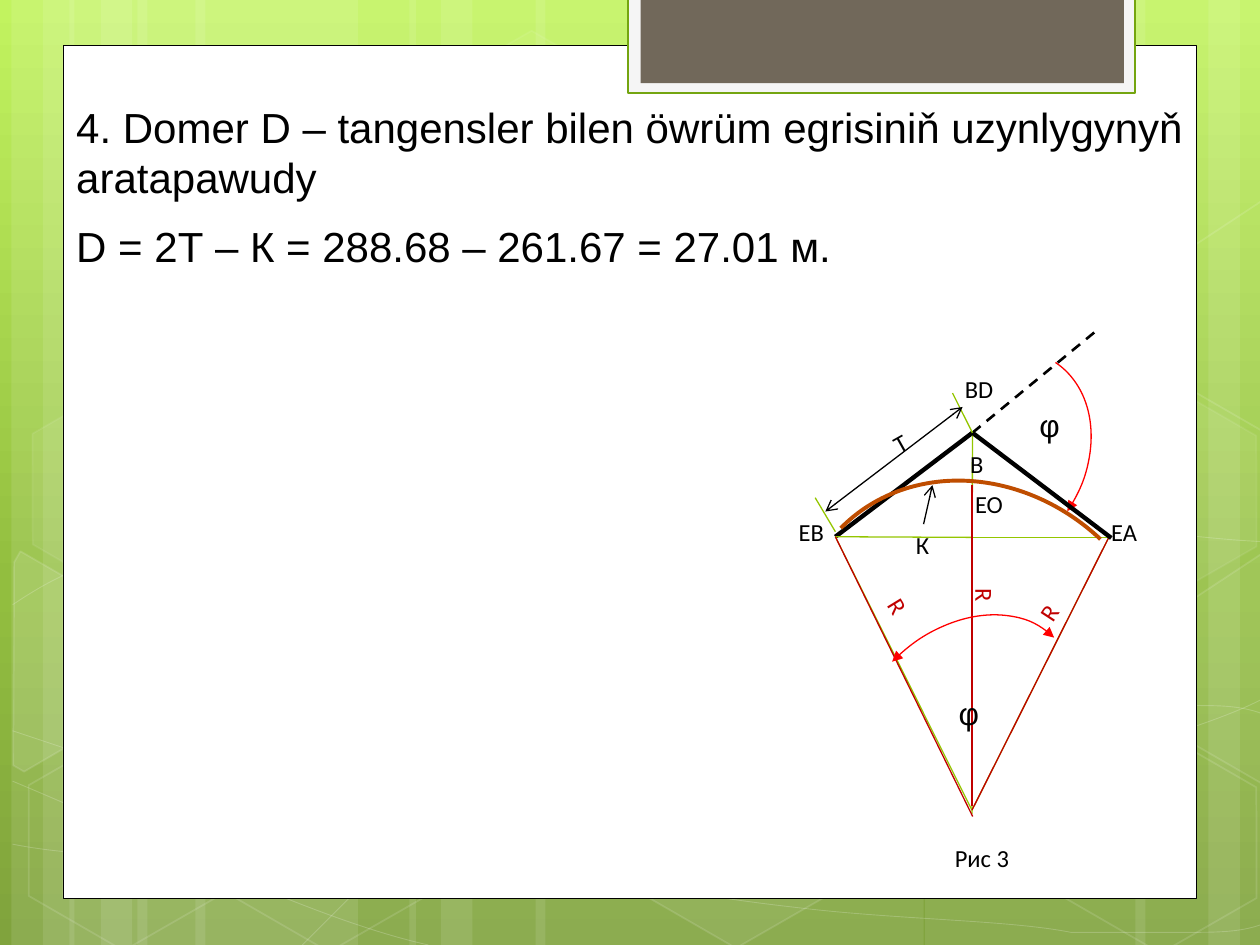
from copy import deepcopy
from dataclasses import dataclass
from math import cos, radians, sin

from pptx import Presentation
from pptx.dml.color import RGBColor
from pptx.enum.dml import MSO_LINE_DASH_STYLE as Dash
from pptx.enum.shapes import MSO_CONNECTOR as Connector, MSO_SHAPE as Shape
from pptx.enum.text import MSO_ANCHOR as Anchor, MSO_AUTO_SIZE as AutoSize, PP_ALIGN as Align
from pptx.oxml.ns import qn
from pptx.util import Inches, Pt


@dataclass(frozen=True)
class Theme:
    white: str = "FFFFFF"
    black: str = "000000"
    red: str = "FF0000"
    radius: str = "C00000"
    green: str = "94C600"
    curve: str = "BF4D00"
    tab: str = "71685A"
    tab_frame: str = "F5F5F5"
    tab_border: str = "74A510"
    backdrop: tuple = ((0, "C2F35F"), (0.62, "92BE3F"), (1, "80A33D"))
    heading_font: str = "Arial"
    label_font: str = "Calibri"
    heading_size: int = 24
    angle_size: int = 18
    label_size: int = 14


THEME = Theme()
COLUMNS, ROWS = 100, 75
WIDTH, HEIGHT = Inches(10), Inches(7.5)
CELL = WIDTH // COLUMNS
TILT = 30

BARS = ((0, 17.5), (4.6, 17.5), (31.6, 30.8))
MIRROR = 101.8
HEXAGONS = (
    (33.4, 3.6, 4, 8), (49.7, 58.9, 6, 12), (1.1, 59.1, 0, 12), (1.4, 31.2, 7, 8),
    (17.4, 59.2, 0, 12), (75.3, 45.3, 10, 12), (83.4, 59.3, 0, 12), (83.4, 31.4, 7, 8),
)
CUT_HEXAGONS = (
    (((0.8, 44.5), (1.9, 43.8), (9.6, 48.3), (9.5, 57), (2, 61.4), (0.9, 60.7)), (3.6, 53.6), 10),
    (((92.6, 48.5), (100.2, 44.1), (100.9, 44.6), (100.9, 61.3), (100.2, 61.7), (92.6, 57.3)),
     (98.5, 52), 4),
    (((92.6, 20.7), (100.2, 16.3), (101, 16.8), (100.9, 33.5), (100.2, 33.9), (92.6, 29.5)),
     (98.5, 24.1), 0),
)
WAVES = (
    ((0.7, 67.3), (6.1, 67.6), (11.5, 67.9), (19, 67.8), (26.5, 67.7), (35.8, 67.5), (45.8, 66.5),
     (55.8, 65.5), (70, 63.6), (79.2, 61.7), (88.3, 59.8), (97.7, 56.8), (100.7, 55.1)),
    ((0.7, 47.7), (3.6, 46.1), (6.5, 44.6), (12.1, 43.1), (17.8, 41.6), (25.9, 39.4), (34.7, 38.7),
     (43.6, 38), (54.4, 37.9), (65.4, 38.7), (76.4, 39.5), (94.7, 42.6), (100.7, 43.4)),
    ((0.6, 61.7), (12.7, 67.2), (24.7, 72.7), (33.5, 74.9)),
    ((0.7, 57.8), (3.8, 58.9), (7, 60), (12.8, 61.6), (18.6, 63.1), (27.3, 65.6), (35.7, 67.3),
     (44, 69), (54.5, 70.8), (62.8, 71.8), (71.1, 72.9), (80, 73.3), (85.3, 73.6),
     (90.6, 74), (91.9, 73.8), (94.5, 73.8), (97.1, 73.7), (98.9, 73.5), (100.7, 73.4)),
    ((24.2, 74.9), (26, 72.9), (27.8, 70.9), (30.2, 69.1), (32.6, 67.2), (36, 65.3), (38.8, 63.9),
     (41.6, 62.5), (43.3, 61.9), (46.9, 60.9), (50.6, 59.9), (57.3, 58.5), (60.8, 57.8),
     (64.4, 57.1), (64.9, 57.1), (68, 56.9), (71.1, 56.6), (76, 56.3), (79.4, 56.2),
     (82.9, 56.1), (88.6, 56.2), (88.6, 56.2), (91, 56.2), (93, 56.2), (95.3, 56.2),
     (97.1, 56.3), (98.8, 56.4), (100.6, 56.6)),
)


def grid(*cells):
    return [round(cell * CELL) for cell in cells]


def set_alpha(element, percent):
    for color in element.iter(qn("a:srgbClr")):
        color.append(color.makeelement(qn("a:alpha"), {"val": str(percent * 1000)}))


def style_line(shape, color, width, alpha=100, dash=None, head=None, tail=None):
    shape.line.color.rgb = RGBColor.from_string(color)
    shape.line.width = Pt(width)
    if dash:
        shape.line.dash_style = dash
    line = shape.element.find(".//" + qn("a:ln"))
    if alpha < 100:
        set_alpha(line, alpha)
    for tag, kind in (("a:headEnd", head), ("a:tailEnd", tail)):
        if kind:
            line.append(line.makeelement(qn(tag), {"type": kind}))


def style_fill(shape, color=None, alpha=100):
    shape.shadow.inherit = False
    if color is None or alpha == 0:
        shape.fill.background()
        return
    shape.fill.solid()
    shape.fill.fore_color.rgb = RGBColor.from_string(color)
    if alpha < 100:
        set_alpha(shape.element.spPr.find(qn("a:solidFill")), alpha)


def add_block(slide, kind, box, color=None, alpha=100, rotation=0):
    shape = slide.shapes.add_shape(kind, *grid(*box))
    shape.rotation = rotation
    style_fill(shape, color, alpha)
    shape.line.fill.background()
    return shape


def add_outline(slide, points, closed=False, alpha=0):
    builder = slide.shapes.build_freeform(*points[0], scale=CELL)
    builder.add_line_segments(points[1:], close=closed)
    shape = builder.convert_to_shape()
    style_fill(shape, THEME.white, alpha)
    return shape


def add_wave(slide, points):
    wave = add_outline(slide, points)
    segments = list(wave.element.iter(qn("a:lnTo")))
    for first in range(0, len(segments), 3):
        bezier = segments[first].makeelement(qn("a:cubicBezTo"), {})
        segments[first].addprevious(bezier)
        for segment in segments[first:first + 3]:
            bezier.append(segment[0])
            segment.getparent().remove(segment)
    style_line(wave, THEME.white, 0.5, 20)


def turn_back(points, centre):
    cosine, sine = cos(radians(TILT)), sin(radians(TILT))
    offsets = [(x - centre[0], y - centre[1]) for x, y in points]
    return [(centre[0] + x * cosine + y * sine, centre[1] - x * sine + y * cosine)
            for x, y in offsets]


def add_line(slide, start, end, color, width=0.75, **ends):
    connector = slide.shapes.add_connector(Connector.STRAIGHT, *grid(*start, *end))
    style_line(connector, color, width, **ends)
    properties = connector.element.spPr
    properties.append(properties.makeelement(qn("a:effectLst"), {}))


def add_arc(slide, box, rotation, color, width=0.75, angles=(), **ends):
    arc = add_block(slide, Shape.ARC, box, rotation=rotation)
    for index, angle in enumerate(angles):
        arc.adjustments[index] = angle
    style_line(arc, color, width, **ends)


def format_runs(paragraph, font, size, color):
    for run in paragraph.runs:
        run.font.name = font
        run.font.size = Pt(size)
        run.font.color.rgb = RGBColor.from_string(color)


def add_label(slide, text, box, color=THEME.black, rotation=0, wrap=False,
              font=THEME.label_font, size=THEME.label_size):
    label = slide.shapes.add_textbox(*grid(*box))
    label.rotation = rotation
    label.text_frame.text = text
    label.text_frame.word_wrap = wrap
    label.text_frame.auto_size = AutoSize.SHAPE_TO_FIT_TEXT
    format_runs(label.text_frame.paragraphs[0], font, size, color)


def fill_placeholder(placeholder, text, box):
    placeholder.left, placeholder.top, placeholder.width, placeholder.height = grid(*box)
    frame = placeholder.text_frame
    frame.text = text
    frame.auto_size = AutoSize.NONE
    frame.vertical_anchor = Anchor.TOP
    paragraph = frame.paragraphs[0]
    paragraph.alignment = Align.LEFT
    paragraph.space_before = Pt(0)
    properties = paragraph._p.get_or_add_pPr()
    properties.set("marL", "0")
    properties.set("indent", "0")
    properties.append(properties.makeelement(qn("a:buNone"), {}))
    format_runs(paragraph, THEME.heading_font, THEME.heading_size, THEME.black)
    placeholder.element.getparent().append(placeholder.element)


def paint_backdrop(slide):
    fill = slide.background.fill
    fill.gradient()
    fill.gradient_angle = 270
    stops = slide.element.find(".//" + qn("a:gsLst"))
    stops.insert(1, deepcopy(stops[0]))
    for stop, (position, color) in zip(fill.gradient_stops, THEME.backdrop):
        stop.position = position
        stop.color.rgb = RGBColor.from_string(color)


def draw_backdrop(slide):
    for offset, wide in BARS:
        for left, width in ((10.9, wide), (0.9, 5), (3.4, 8.3)):
            add_block(slide, Shape.RECTANGLE, (left + offset, 0, width, ROWS), THEME.white, 10)
            if offset == 0:
                mirrored = (MIRROR - left - width, 0, width, ROWS)
                add_block(slide, Shape.RECTANGLE, mirrored, THEME.white, 10, 180)
    for wave in WAVES:
        add_wave(slide, wave)
    for left, top, alpha, line_alpha in HEXAGONS:
        hexagon = add_block(slide, Shape.HEXAGON, (left, top, 17.5, 15.2), THEME.white, alpha, TILT)
        hexagon.adjustments[0] = 0.29
        style_line(hexagon, THEME.white, 1, line_alpha)
    for points, centre, alpha in CUT_HEXAGONS:
        cut_hexagon = add_outline(slide, turn_back(points, centre), True, alpha)
        cut_hexagon.rotation = TILT
        style_line(cut_hexagon, THEME.white, 1, 12)


def draw_panel(slide):
    panel = add_block(slide, Shape.RECTANGLE, (5, 3.6, 90, 67.7), THEME.white)
    style_line(panel, THEME.black, 0.5)
    frame = add_block(slide, Shape.RECTANGLE, (49.85, -0.2, 40.25, 7.6), THEME.tab_frame)
    style_line(frame, THEME.tab_border, 1.25)
    add_block(slide, Shape.RECTANGLE, (50.85, -0.2, 38.35, 6.8), THEME.tab)


def draw_curve_diagram(slide):
    vertex, begin, end = (77.18, 34.35), (66.3, 42.6), (88, 42.65)
    centre, middle = (77.14, 64.3), (77.14, 42.65)
    add_line(slide, begin, vertex, THEME.black, 2.5)
    for start, finish in ((middle, end), (middle, begin), (centre, begin),
                          (centre, end), (vertex, (77.14, 64.6))):
        add_line(slide, start, finish, THEME.green)
    for start, finish in (((77.14, 64), (77.14, 38.5)), (centre, end), ((77.2, 64.8), begin)):
        add_line(slide, start, finish, THEME.radius)
    add_line(slide, vertex, (87.2, 26.1), THEME.black, 1.5, dash=Dash.DASH)
    add_arc(slide, (71.25, 27.2, 14.7, 18.6), 33.8, THEME.red, tail="triangle")
    add_line(slide, vertex, (88.2, 42.7), THEME.black, 2.5)
    add_line(slide, (66.3, 42.2), (64.7, 39.5), THEME.green)
    add_line(slide, vertex, (75.6, 31.2), THEME.green)
    add_line(slide, (65.5, 40.6), (76.4, 32.3), THEME.black, head="arrow", tail="arrow")
    add_arc(slide, (65.95, 50.2, 20.8, 15.6), 314.7, THEME.red, head="triangle", tail="triangle")
    add_line(slide, (73.3, 41.6), (74, 38.5), THEME.black, tail="arrow")
    add_arc(slide, (64.15, 37.2, 27.6, 31.4), 314.4, THEME.curve, 2.25, (162, 215.1))


def label_curve_diagram(slide):
    for text, left, top, width in (
            ("Рис 3", 74.8, 66.4, 6.4), ("BD", 75.6, 29.2, 4.3), ("EB", 62.4, 40.55, 4.1),
            ("EA", 87.2, 40.55, 4.1), ("EO", 76.4, 38.3, 4.3), ("К", 71.7, 41.6, 3.1),
            ("B", 76, 35.15, 3.1)):
        add_label(slide, text, (left, top, width, 3.4))
    add_label(slide, "Т", (70, 33.5, 3, 3.4), rotation=330.8)
    for left, top, width, rotation in ((69.1, 47.6, 5.7, 58.5), (76.6, 45.6, 3.1, 90),
                                       (81.7, 46.9, 3.1, 303.2)):
        add_label(slide, "R", (left, top, width, 3.4), THEME.radius, rotation, width > 5)
    for left, top in ((81.5, 31.7), (75.1, 54.6)):
        add_label(slide, "φ", (left, top, 4.7, 4.1), wrap=True,
                  font=THEME.heading_font, size=THEME.angle_size)


def main():
    presentation = Presentation()
    presentation.slide_width, presentation.slide_height = WIDTH, HEIGHT
    slide = presentation.slides.add_slide(presentation.slide_layouts[1])
    paint_backdrop(slide)
    draw_backdrop(slide)
    draw_panel(slide)
    draw_curve_diagram(slide)
    label_curve_diagram(slide)
    title, body = slide.placeholders
    fill_placeholder(title, "4. Domer D – tangensler bilen öwrüm egrisiniň uzynlygynyň aratapawudy",
                     (5.05, 7.55, 91.4, 13.2))
    fill_placeholder(body, "D = 2Т – К = 288.68 – 261.67 = 27.01 м.", (5.05, 17, 89.8, 5.1))
    presentation.save("out.pptx")


if __name__ == "__main__":
    main()
